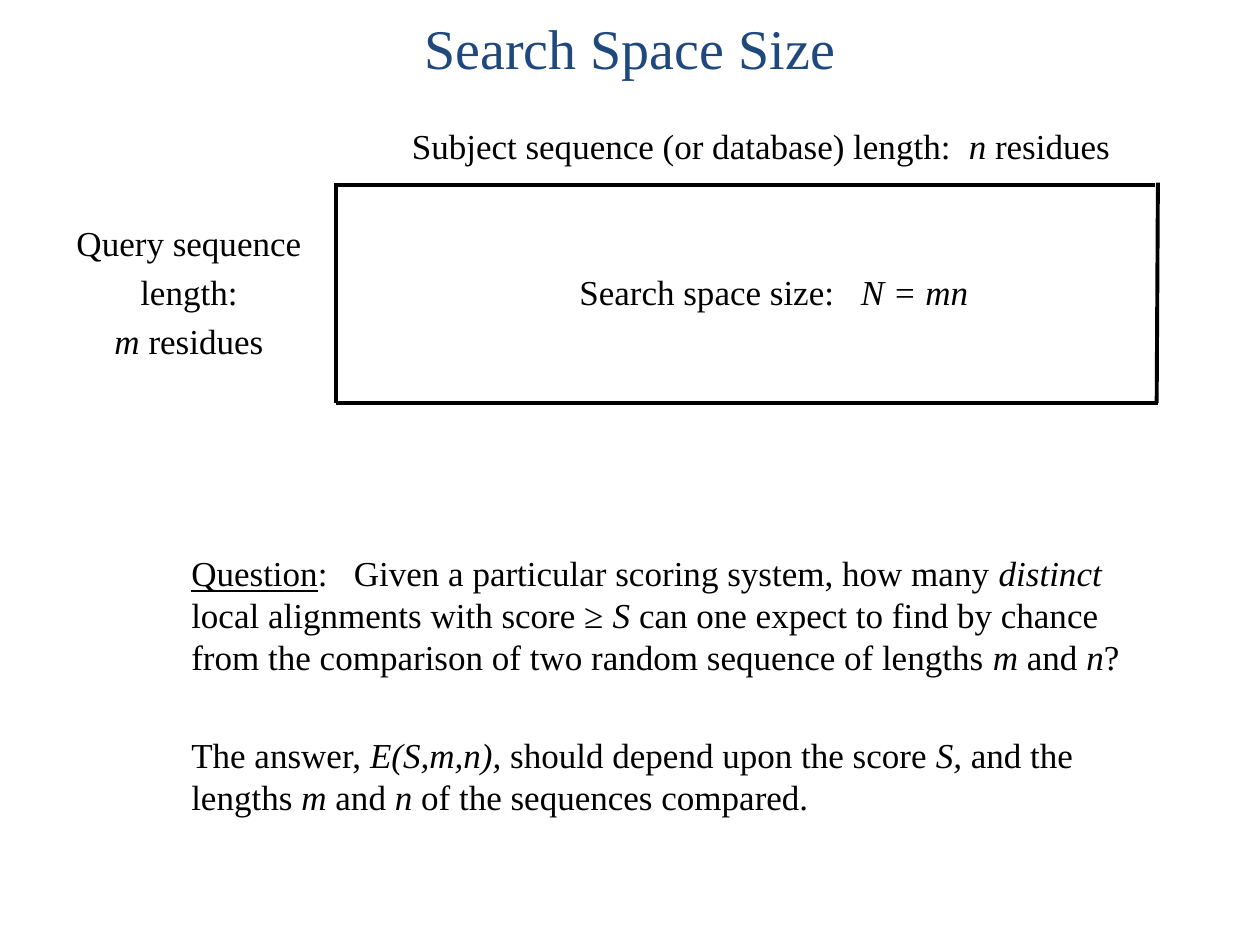
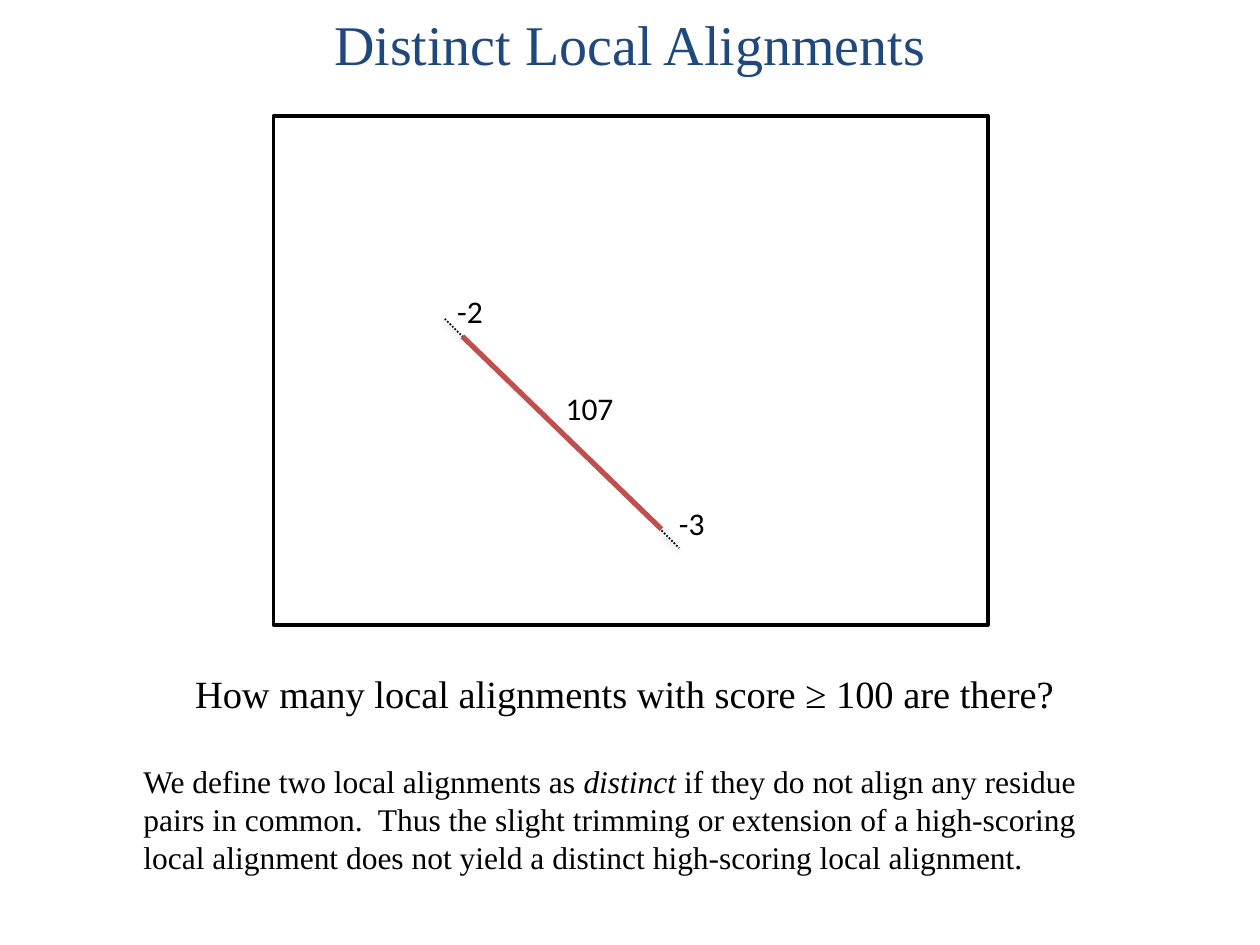
import pptx
import pptx.dml.color
import pptx.enum.dml
import pptx.enum.shapes
import pptx.enum.text
import pptx.oxml
import pptx.oxml.ns
import pptx.util

Inches = pptx.util.Inches
Pt = pptx.util.Pt
ALIGN = pptx.enum.text.PP_ALIGN
ANCHOR = pptx.enum.text.MSO_ANCHOR
AUTO = pptx.enum.text.MSO_AUTO_SIZE

BLACK, WHITE, NAVY, RED = "000000", "FFFFFF", "1F497D", "C0504D"
SERIF, SANS = "Times New Roman", "Calibri"
SHADOW = (
    '<a:outerShdw blurRad="40000" dist="20000" dir="5400000" rotWithShape="0">'
    '<a:srgbClr val="000000"><a:alpha val="38000"/></a:srgbClr></a:outerShdw>'
)


def rgb(value):
    return pptx.dml.color.RGBColor.from_string(value)


class Deck:
    def __init__(self):
        self.prs = pptx.Presentation()
        self.prs.slide_width = Inches(10)
        self.prs.slide_height = Inches(7.5)
        self.s = None

    def slide(self, title, top, height):
        self.s = self.prs.slides.add_slide(self.prs.slide_layouts[5])
        sp = self.s.shapes.title
        sp.left, sp.top = Inches(0.5), Inches(top)
        sp.width, sp.height = Inches(9), Inches(height)
        tf = sp.text_frame
        tf.text = title
        tf.auto_size = AUTO.NONE
        tf.vertical_anchor = ANCHOR.MIDDLE
        p = tf.paragraphs[0]
        p.alignment = ALIGN.CENTER
        self.font(p, 32, SERIF, NAVY)

    def font(self, p, size, name, color):
        p.font.size = Pt(size)
        p.font.name = name
        p.font.color.rgb = rgb(color)

    def runs(self, p, marked):
        for i, italic_part in enumerate(marked.split("*")):
            for j, part in enumerate(italic_part.split("_")):
                if part:
                    r = p.add_run()
                    r.text = part
                    if i % 2:
                        r.font.italic = True
                    if j % 2:
                        r.font.underline = True

    def text(self, left, top, width, height, paragraphs, size=20, name=SERIF,
             wrap=True, align=ALIGN.LEFT, anchor=ANCHOR.TOP, first=0, before=0):
        sp = self.s.shapes.add_textbox(Inches(left), Inches(top), Inches(width), Inches(height))
        tf = sp.text_frame
        tf.word_wrap = wrap
        tf.vertical_anchor = anchor
        for i, marked in enumerate(paragraphs):
            p = tf.add_paragraph() if i else tf.paragraphs[0]
            p.alignment = align
            p.space_before = Pt(before if i else first)
            self.font(p, size, name, BLACK)
            self.runs(p, marked)

    def line(self, x1, y1, x2, y2, color=BLACK, width=2.25, dotted=False):
        sp = self.s.shapes.add_connector(
            pptx.enum.shapes.MSO_CONNECTOR.STRAIGHT,
            Inches(x1), Inches(y1), Inches(x2), Inches(y2))
        sp.line.color.rgb = rgb(color)
        sp.line.width = Pt(width)
        if dotted:
            sp.line.dash_style = pptx.enum.dml.MSO_LINE.ROUND_DOT
        effects = SHADOW if dotted else ""
        sp._element.spPr.append(pptx.oxml.parse_xml(
            f'<a:effectLst {pptx.oxml.ns.nsdecls("a")}>{effects}</a:effectLst>'))

    def rect(self, left, top, width, height):
        sp = self.s.shapes.add_shape(
            pptx.enum.shapes.MSO_SHAPE.RECTANGLE,
            Inches(left), Inches(top), Inches(width), Inches(height))
        sp.shadow.inherit = False
        sp.fill.solid()
        sp.fill.fore_color.rgb = rgb(WHITE)
        sp.line.color.rgb = rgb(BLACK)
        sp.line.width = Pt(2)


def search_space(deck):
    deck.slide("Search Space Size", 0.12, 0.5)
    deck.line(2.67, 1.47, 9.17, 1.47)
    deck.line(2.67, 1.45, 2.67, 3.2)
    deck.line(2.67, 3.2, 9.19, 3.2)
    deck.line(9.18, 3.2, 9.19, 1.45)
    deck.text(3.17, 0.94, 6.2, 0.42,
              ["Subject sequence (or database) length:  *n* residues"])
    deck.text(0.4, 1.7, 2.2, 1.22, ["Query sequence", "length:", "*m* residues"],
              align=ALIGN.CENTER, anchor=ANCHOR.MIDDLE, before=4)
    deck.text(4.5, 2.1, 4, 0.42, ["Search space size:   *N = mn*"], anchor=ANCHOR.MIDDLE)
    deck.text(1.42, 4.33, 7.67, 2.13, [
        "_Question_:   Given a particular scoring system, how many *distinct* local "
        "alignments with score ≥ *S *can one expect to find by chance from the "
        "comparison of two random sequence of lengths *m* and *n*?",
        "The answer, *E(S,m,n),* should depend upon the score *S,* and the lengths "
        "*m* and *n* of the sequences compared.",
    ], first=4, before=32)


def distinct_alignments(deck):
    deck.slide("Distinct Local Alignments", -0.01, 0.71)
    deck.rect(2.17, 0.92, 5.67, 4.04)
    deck.line(3.67, 2.67, 5.25, 4.2, RED, 3)
    for x, y in ((3.53, 2.53), (5.25, 4.21)):
        deck.line(x, y, x + 0.14, y + 0.14, width=1, dotted=True)
    for score, left, top, width in (("107", 4.39, 3.04, 0.59),
                                    ("-2", 3.53, 2.27, 0.41),
                                    ("-3", 5.29, 3.95, 0.41)):
        deck.text(left, top, width, 0.4, [score], 18, SANS, wrap=False)
    deck.text(1.45, 5.27, 7.1, 0.47,
              ["How many local alignments with score ≥ 100 are there?"], 22, wrap=False)
    deck.text(1.04, 6, 7.92, 1.01, [
        "We define two local alignments as *distinct* if they do not align any residue "
        "pairs in common.  Thus the slight trimming or extension of a high-scoring "
        "local alignment does not yield a distinct high-scoring local alignment.",
    ], 18)


def main():
    deck = Deck()
    search_space(deck)
    distinct_alignments(deck)
    deck.prs.save("out.pptx")


if __name__ == "__main__":
    main()
